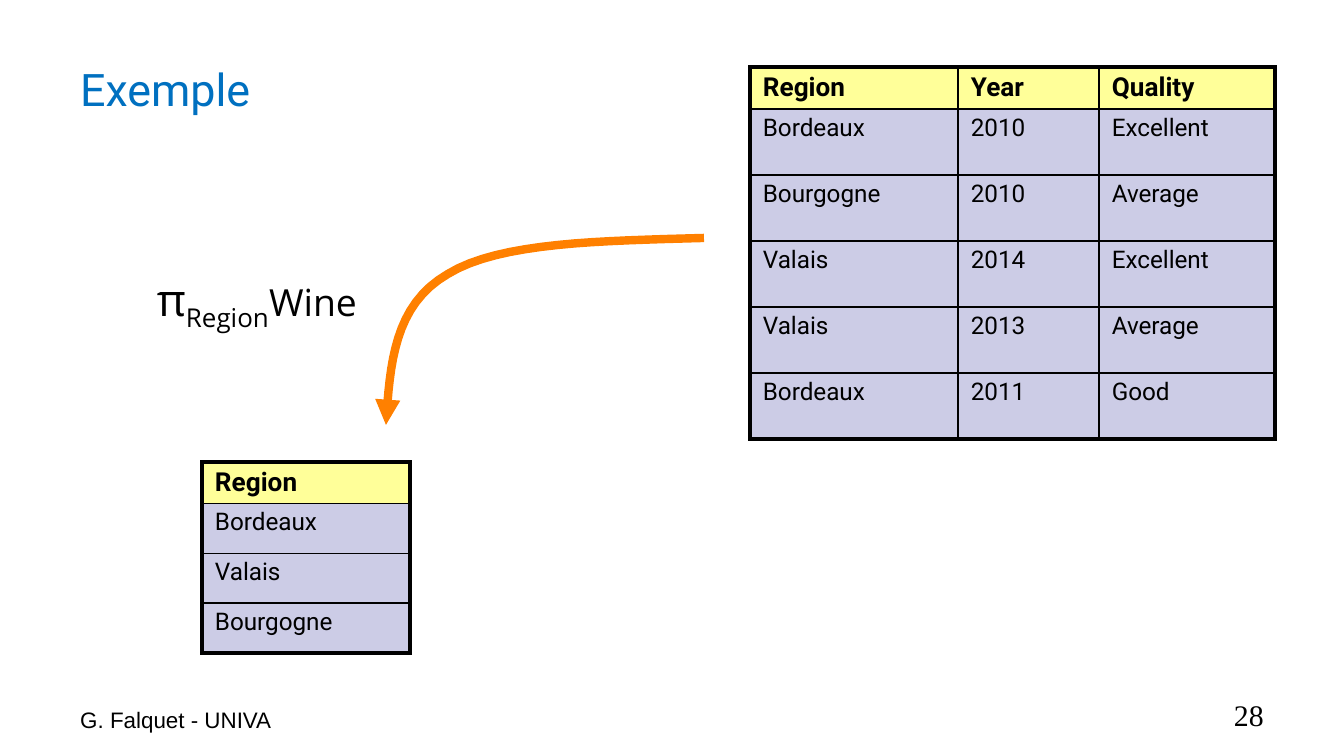
from lxml.etree import SubElement
from pptx import Presentation
from pptx.dml.color import RGBColor
from pptx.enum.text import MSO_ANCHOR, PP_ALIGN
from pptx.oxml.ns import qn
from pptx.util import Pt

EMU_PER_PX = 914400 / 134.4

BLACK = RGBColor(0x00, 0x00, 0x00)
WHITE = RGBColor(0xFF, 0xFF, 0xFF)
BLUE = RGBColor(0x00, 0x70, 0xC0)
ORANGE = RGBColor(0xFF, 0x80, 0x00)
YELLOW = RGBColor(0xFF, 0xFF, 0x99)
LAVENDER = RGBColor(0xCC, 0xCC, 0xE6)


def px(length):
    return round(length * EMU_PER_PX)


def bezier(p0, p1, p2, p3, steps=16):
    """Points along a cubic curve, without its start."""
    points = []
    for step in range(1, steps + 1):
        t = step / steps
        u = 1 - t
        weights = (u ** 3, 3 * u * u * t, 3 * u * t * t, t ** 3)
        points.append(tuple(
            sum(w * p[axis] for w, p in zip(weights, (p0, p1, p2, p3)))
            for axis in (0, 1)))
    return points


class SlideBuilder:
    font = "Roboto"
    inner_border = 1
    outer_border = 2.25
    header_size = 14
    body_size = 13

    def __init__(self, slide):
        self.slide = slide

    def run(self, paragraph, text, size, font=None, color=BLACK, bold=False,
            baseline=0):
        run = paragraph.add_run()
        run.text = text
        run.font.size = Pt(size)
        run.font.name = font or self.font
        run.font.bold = bold
        run.font.color.rgb = color
        if baseline:
            run._r.get_or_add_rPr().set("baseline", str(baseline * 1000))

    def text(self, box, text, size, anchor, align=PP_ALIGN.LEFT, **style):
        frame = self.slide.shapes.add_textbox(*map(px, box)).text_frame
        frame.word_wrap = True
        frame.vertical_anchor = anchor
        frame.paragraphs[0].alignment = align
        self.run(frame.paragraphs[0], text, size, **style)

    def outline(self, points, color, width, closed):
        start, *others = [(px(x), px(y)) for x, y in points]
        builder = self.slide.shapes.build_freeform(*start)
        builder.add_line_segments(others, close=closed)
        shape = builder.convert_to_shape()
        shape.shadow.inherit = False
        shape.line.color.rgb = color
        shape.line.width = Pt(width)
        if closed:
            shape.fill.solid()
            shape.fill.fore_color.rgb = color
        else:
            shape.fill.background()
        return shape

    def formula(self, points, parts):
        frame = self.outline(points, WHITE, 0.75, closed=True).text_frame
        frame.word_wrap = False
        frame.vertical_anchor = MSO_ANCHOR.MIDDLE
        frame.paragraphs[0].alignment = PP_ALIGN.CENTER
        for text, size, baseline in parts:
            self.run(frame.paragraphs[0], text, size, "Open Sans",
                     baseline=baseline)

    def curved_arrow(self, points, color, width):
        arrow = self.outline(points, color, width, closed=False)
        SubElement(arrow.line._get_or_add_ln(), qn("a:tailEnd"),
                   type="triangle")

    def border(self, cell, side, width):
        line = SubElement(cell._tc.get_or_add_tcPr(), qn(f"a:ln{side}"),
                          w=str(Pt(width)))
        fill = SubElement(line, qn("a:solidFill"))
        SubElement(fill, qn("a:srgbClr"), val=str(BLACK))

    def table(self, left, top, widths, header_height, row_height, rows):
        heights = [header_height] + [row_height] * (len(rows) - 1)
        table = self.slide.shapes.add_table(
            len(rows), len(widths), px(left), px(top),
            px(sum(widths)), px(sum(heights))).table
        table.horz_banding = False
        for column, width in zip(table.columns, widths):
            column.width = px(width)
        for r, (values, height) in enumerate(zip(rows, heights)):
            table.rows[r].height = px(height)
            for c, value in enumerate(values):
                self.cell(table.cell(r, c), value, header=r == 0, outer={
                    "L": c == 0, "R": c == len(widths) - 1,
                    "T": r == 0, "B": r == len(rows) - 1})

    def cell(self, cell, value, header, outer):
        cell.margin_left = cell.margin_right = px(13)
        cell.margin_top = cell.margin_bottom = px(5)
        for side, is_outer in outer.items():
            self.border(cell, side,
                        self.outer_border if is_outer else self.inner_border)
        cell.fill.solid()
        cell.fill.fore_color.rgb = YELLOW if header else LAVENDER
        self.run(cell.text_frame.paragraphs[0], value,
                 self.header_size if header else self.body_size, bold=header)


def main():
    deck = Presentation()
    deck.slide_width, deck.slide_height = px(1344), px(756)
    page = SlideBuilder(deck.slides.add_slide(deck.slide_layouts[6]))

    # Page number and title
    page.text((964, 688, 313, 51), "28", 16, MSO_ANCHOR.BOTTOM,
              PP_ALIGN.RIGHT, font="Times New Roman")
    page.text((67, 42, 1187, 93), "Exemple", 24, MSO_ANCHOR.MIDDLE,
              color=BLUE)

    # Result of the projection
    page.table(202, 462, [208], 41, 50,
               [["Region"], ["Bordeaux"], ["Valais"], ["Bourgogne"]])

    # Projection formula
    page.formula([(22, 273), (95, 332), (419, 332), (492, 273)],
                 [("π", 24, 0), ("Region", 24, -25), ("Wine", 20, 0)])

    # Wine relation
    page.table(750, 67, [208, 141, 176], 42, 66, [
        ["Region", "Year", "Quality"],
        ["Bordeaux", "2010", "Excellent"],
        ["Bourgogne", "2010", "Average"],
        ["Valais", "2014", "Excellent"],
        ["Valais", "2013", "Average"],
        ["Bordeaux", "2011", "Good"],
    ])

    # Arrow from relation to result
    start, bend, tip = (704, 238), (448, 274), (386, 425)
    page.curved_arrow(
        [start, *bezier(start, (602, 241), (500, 242), bend),
         *bezier(bend, (394, 305), (390, 364), tip)], ORANGE, 4.5)

    # Footer
    page.text((67, 688, 313, 52), "G. Falquet - UNIVA", 12,
              MSO_ANCHOR.BOTTOM, font="Arial")

    deck.save("out.pptx")


if __name__ == "__main__":
    main()
